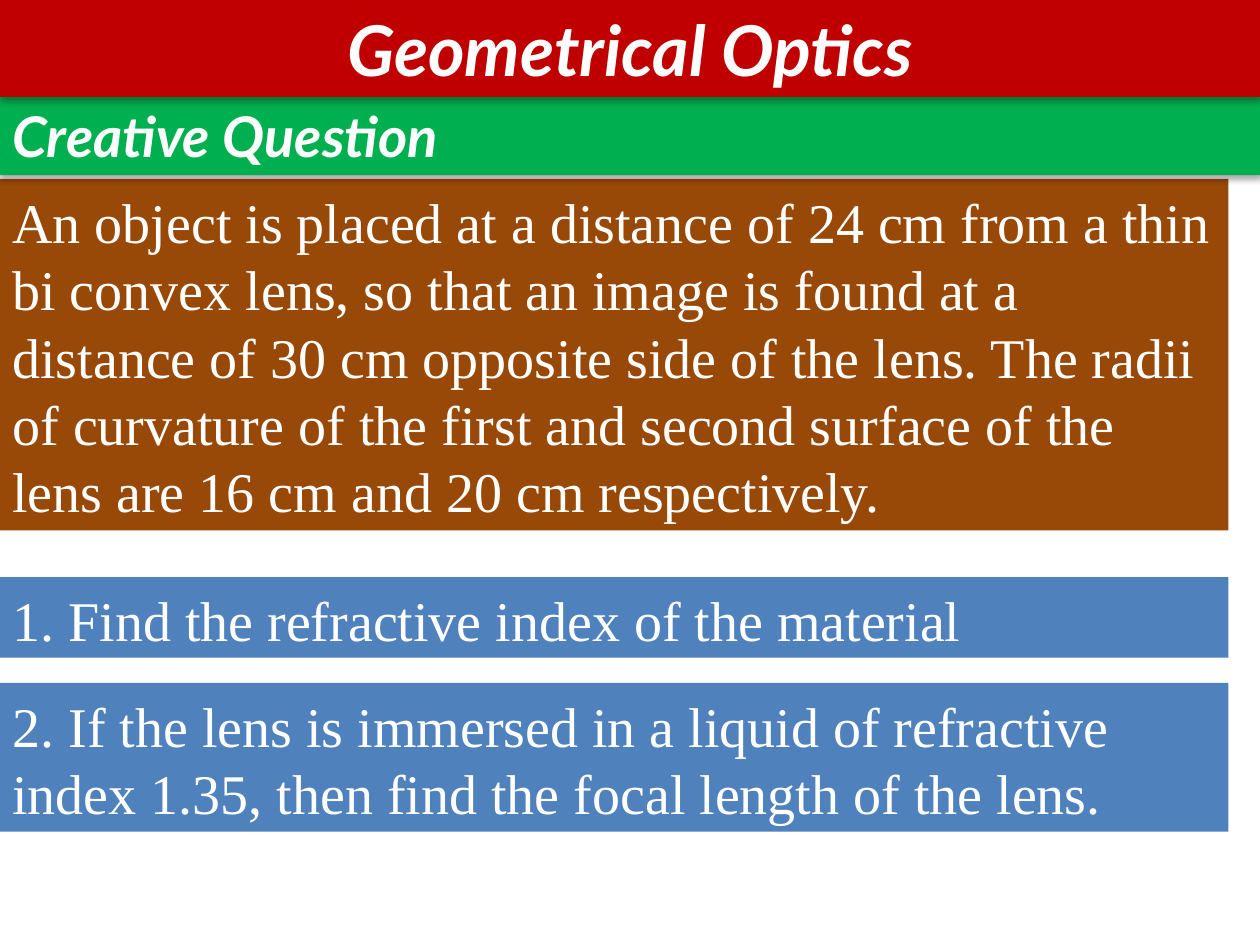
"""Build a geometrical optics slide with a creative question."""
from lxml import etree
from pptx import Presentation
from pptx import util as u
from pptx.dml.color import RGBColor
from pptx.enum import shapes, text
from pptx.oxml.ns import qn

COLORS = {"title": "C00000", "heading": "00B050", "problem": "984807",
          "question": "4F81BD", "text": "FFFFFF", "shadow": "000000"}


def write(box, words, size=32, font="Times New Roman", strong=False,
          align=text.PP_ALIGN.LEFT, anchor=text.MSO_ANCHOR.TOP, top=0.05, spacing=None):
    frame = box.text_frame
    frame.word_wrap = True
    frame.auto_size = text.MSO_AUTO_SIZE.NONE
    frame.vertical_anchor = anchor
    frame.margin_left = frame.margin_right = u.Inches(0.1)
    frame.margin_top, frame.margin_bottom = u.Inches(top), u.Inches(0.05)
    para = frame.paragraphs[0]
    para.alignment = align
    para.line_spacing = spacing
    span = para.add_run()
    span.text = words
    span.font.size = u.Pt(size)
    span.font.name = font
    span.font.bold = span.font.italic = strong
    span.font.color.rgb = RGBColor.from_string(COLORS["text"])


def add_shadow(box):
    properties = box._element.spPr
    for old in properties.findall(qn("a:effectLst")):
        properties.remove(old)
    effects = etree.SubElement(properties, qn("a:effectLst"))
    shadow = etree.SubElement(effects, qn("a:outerShdw"), blurRad=str(u.Pt(3.5)),
                              dist=str(u.Pt(2.2)), dir="5400000", algn="ctr", rotWithShape="0")
    color = etree.SubElement(shadow, qn("a:srgbClr"), val=COLORS["shadow"])
    etree.SubElement(color, qn("a:alpha"), val="32000")


deck = Presentation()
deck.slide_width, deck.slide_height = u.Inches(10), u.Inches(7.5)
page = deck.slides.add_slide(deck.slide_layouts[5])

body = dict(top=0.07, spacing=u.Pt(38.4))
banner = dict(font="Lato", strong=True, anchor=text.MSO_ANCHOR.MIDDLE)
bands = [
    ("problem", 1.42, 9.75, 2.79, body,
     "An object is placed at a distance of 24 cm from a thin bi convex lens, so that an image "
     "is found at a distance of 30 cm opposite side of the lens. The radii of curvature of the "
     "first and second surface of the lens are 16 cm and 20 cm respectively."),
    ("heading", 0.75, 10, 0.64, banner, "Creative Question"),
    ("title", 0, 10, 0.77, dict(banner, size=40, align=text.PP_ALIGN.CENTER),
     "Geometrical Optics"),
    ("question", 4.58, 9.75, 0.64, body, "1. Find the refractive index of the material"),
    ("question", 5.42, 9.75, 1.18, body,
     "2. If the lens is immersed in a liquid of refractive index 1.35, then find the focal "
     "length of the lens."),
]

for role, top, width, height, style, words in bands:
    place = [u.Inches(value) for value in (0, top, width, height)]
    if role == "title":
        box = page.shapes.title
        box.left, box.top, box.width, box.height = place
        box._element.getparent().append(box._element)
    else:
        box = page.shapes.add_shape(shapes.MSO_SHAPE.RECTANGLE, *place)
    box.fill.solid()
    box.fill.fore_color.rgb = RGBColor.from_string(COLORS[role])
    box.line.fill.background()
    if style is body:
        box.shadow.inherit = False
    else:
        add_shadow(box)
    write(box, words, **style)

deck.save("out.pptx")
